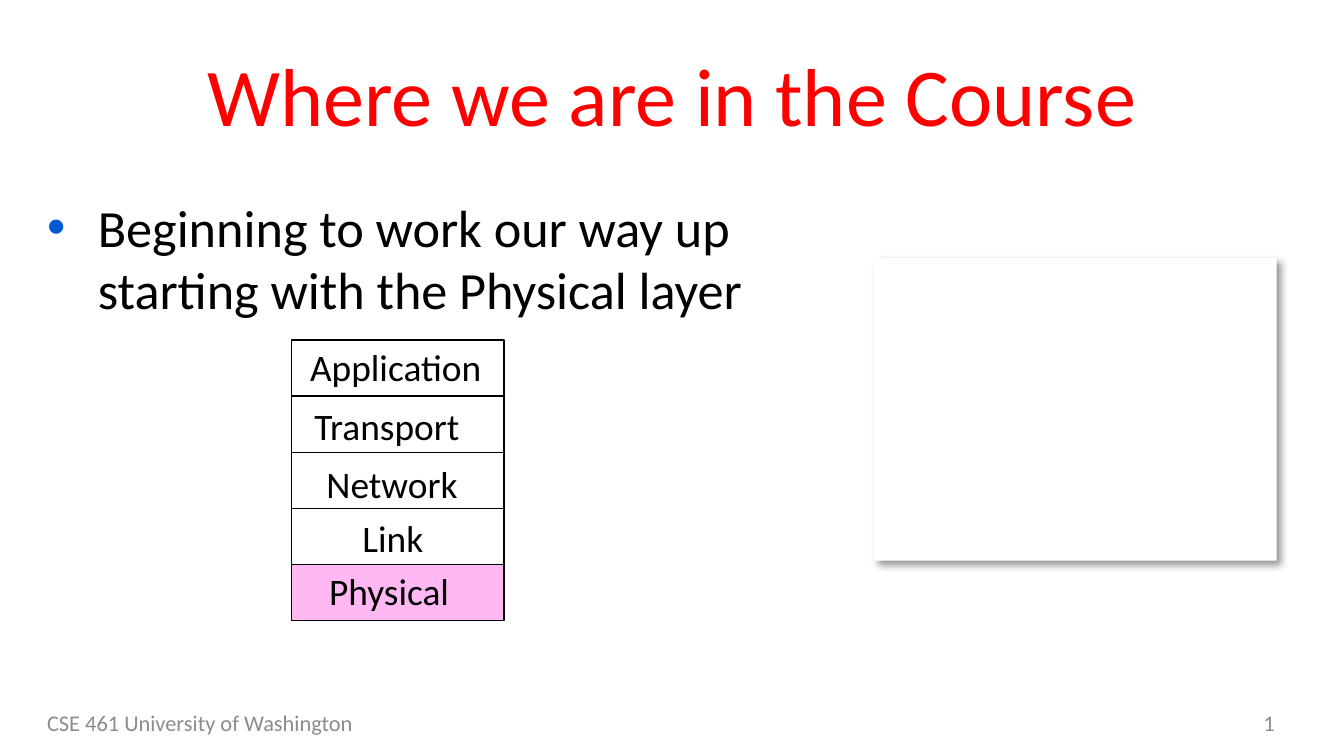
from dataclasses import dataclass

from lxml import etree
from pptx import Presentation, util as u
from pptx.dml.color import RGBColor as Rgb
from pptx.enum import shapes, text
from pptx.oxml import ns

Cm, Pt = u.Cm, u.Pt
A, P = text.MSO_ANCHOR, text.PP_ALIGN


@dataclass(frozen=True)
class Theme:
    """Hold the colours, font and type sizes."""
    font: str = "Calibri"
    red: str = "FF0000"
    black: str = "000000"
    white: str = "FFFFFF"
    grey: str = "8C8C8C"
    blue: str = "005BD3"
    pink: str = "FFB8F2"
    head: int = 44
    body: int = 28
    label: int = 20
    foot: int = 12


T = Theme()
LAYERS = [
    ("Application", 0.1, -0.05, 3.96, T.white),
    ("Transport", 0.18, 0, 3.53, T.white),
    ("Network", 0.41, 0.05, 3.1, None),
    ("Link", 1.09, 0, 1.83, None),
    ("Physical", 0.46, -0.05, 3.15, T.pink),
]


def apply(obj, vals):
    """Set each named value on the object."""
    for key, val in vals.items():
        setattr(obj, key, val)


def place(shape, box):
    """Move the shape into a box given in centimetres."""
    apply(shape, dict(zip(("left", "top", "width", "height"), map(Cm, box))))


def write(shape, words, size, tone, align=P.LEFT, **frame):
    """Put one formatted paragraph in the shape and return it."""
    apply(shape.text_frame, {"word_wrap": True, **frame})
    para = shape.text_frame.paragraphs[0]
    para.alignment = align
    run = para.add_run()
    run.text = words
    apply(run.font, {"name": T.font, "size": Pt(size)})
    run.font.color.rgb = Rgb.from_string(tone)
    return para


def label(slide, box, *args, **frame):
    """Add a text box and return its paragraph."""
    return write(slide.shapes.add_textbox(*map(Cm, box)), *args, **frame)


def rect(slide, box, fill=None, line=None):
    """Add a plain rectangle with optional fill and line."""
    shape = slide.shapes.add_shape(shapes.MSO_SHAPE.RECTANGLE, *map(Cm, box))
    shape.shadow.inherit = False
    if fill:
        shape.fill.solid()
        shape.fill.fore_color.rgb = Rgb.from_string(fill)
    else:
        shape.fill.background()
    if line:
        shape.line.color.rgb = Rgb.from_string(line)
        shape.line.width = Pt(0.75)
    else:
        shape.line.fill.background()
    return shape


def panel(slide, box):
    """Draw the white panel with its soft shadow."""
    list_ = rect(slide, box, T.white).element.spPr.find(ns.qn("a:effectLst"))
    glow = etree.SubElement(
        list_, ns.qn("a:outerShdw"), blurRad=str(Pt(4)), dist=str(Pt(3)),
        dir=str(45 * 60000), algn="tl", rotWithShape="0")
    tone = etree.SubElement(glow, ns.qn("a:srgbClr"), val=T.black)
    etree.SubElement(tone, ns.qn("a:alpha"), val="40000")


def title(slide, box):
    """Fill the title placeholder."""
    shape = slide.shapes.title
    place(shape, box)
    write(shape, "Where we are in the Course", T.head, T.red, P.CENTER,
          vertical_anchor=A.MIDDLE)


def body(slide, box):
    """Write the bullet with a hanging indent."""
    para = label(
        slide, box,
        "Beginning to work our way up starting with the Physical layer",
        T.body, T.black)
    props = para._p.get_or_add_pPr()
    props.set("marL", str(Cm(0.96)))
    props.set("indent", str(-Cm(0.96)))
    tint = etree.SubElement(props, ns.qn("a:buClr"))
    etree.SubElement(tint, ns.qn("a:srgbClr"), val=T.blue)
    etree.SubElement(props, ns.qn("a:buFont"), typeface="Arial")
    etree.SubElement(props, ns.qn("a:buChar"), char="•")


def stack(slide, box):
    """Draw the protocol layers as equal rows with labels."""
    left, top, wide, high = box
    step = high / len(LAYERS)
    for i, (name, dx, dy, span, fill) in enumerate(LAYERS):
        y = top + i * step
        rect(slide, (left, y, wide, step), fill, T.black)
        label(slide, (left + dx, y + dy, span, 1.1), name, T.label, T.black,
              word_wrap=False)


def footer(slide, box):
    """Write the course name and the page number."""
    left, top, wide, high = box
    parts = [("CSE 461 University of Washington", left, 8.05, P.LEFT),
             ("1", left + wide - 5.92, 5.92, P.RIGHT)]
    for words, x, span, align in parts:
        label(slide, (x, top, span, high), words, T.foot, T.grey, align,
              vertical_anchor=A.MIDDLE)


def main():
    """Build and save the slide."""
    deck = Presentation()
    apply(deck, {"slide_width": Cm(25.4), "slide_height": Cm(14.29)})
    slide = deck.slides.add_slide(deck.slide_layouts.get_by_name("Title Only"))
    panel(slide, (16.51, 4.88, 7.62, 5.72))
    footer(slide, (0.64, 13.28, 23.7, 0.76))
    title(slide, (0.64, 0.58, 24.13, 2.39))
    body(slide, (0.64, 3.56, 15.88, 9.32))
    stack(slide, (5.51, 6.43, 4.02, 5.3))
    deck.save("out.pptx")


if __name__ == "__main__":
    main()
